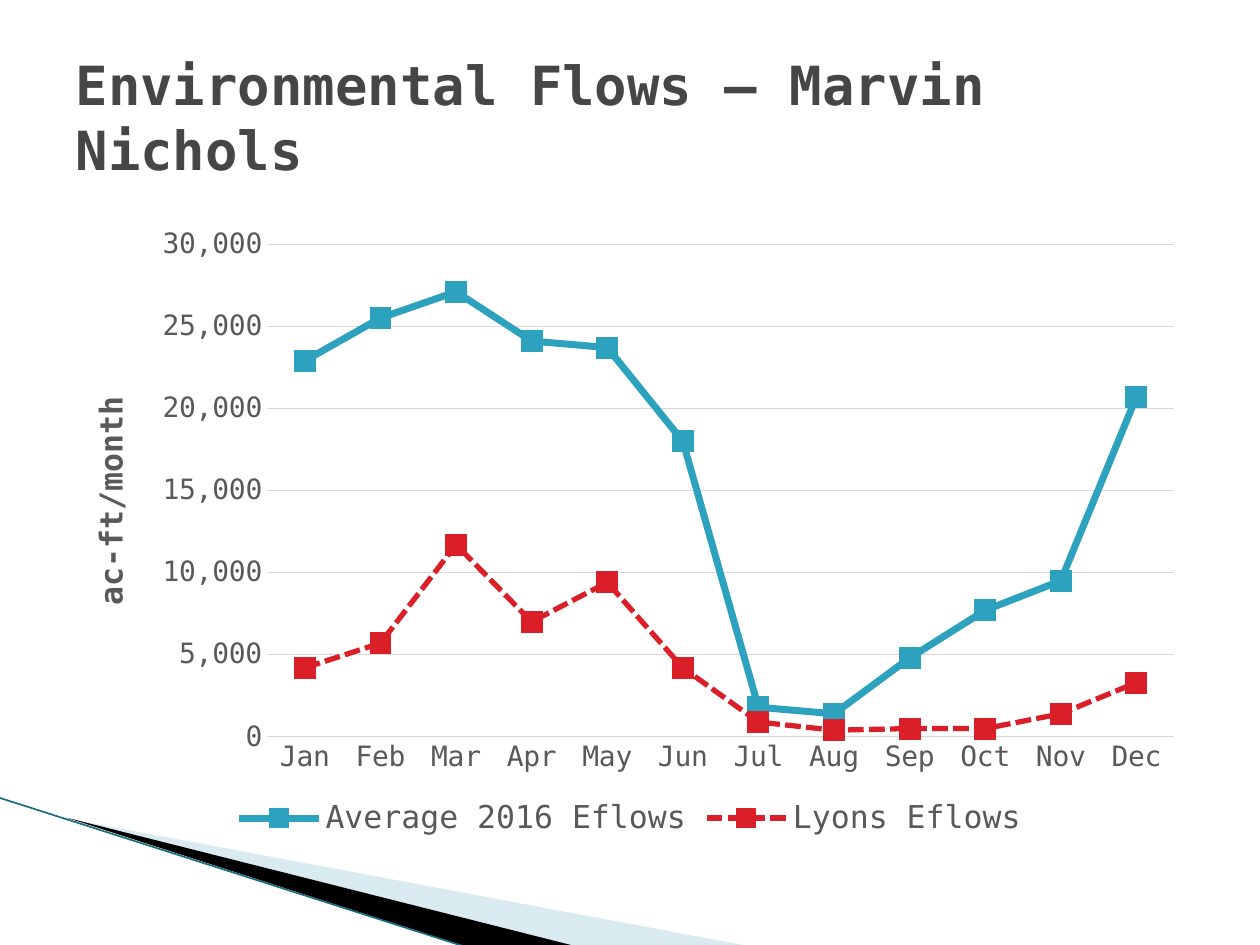
import pptx
import pptx.chart.data
import pptx.dml.color
import pptx.enum.chart
import pptx.enum.dml
import pptx.enum.shapes
import pptx.enum.text
import pptx.oxml
import pptx.oxml.ns
import pptx.util
from pptx.util import Inches

FONT = "DejaVu Sans Mono"
COLORS = {
    "title": "464646",
    "text": "595959",
    "grid": "D9D9D9",
    "average": "2DA2BF",
    "lyons": "DA1F28",
    "pale": "A0CBDC",
    "black": "000000",
    "edge": "1A6E82",
}
MONTHS = ["Jan", "Feb", "Mar", "Apr", "May", "Jun",
          "Jul", "Aug", "Sep", "Oct", "Nov", "Dec"]
AVERAGE = [22900, 25500, 27100, 24100, 23700, 18000,
           1800, 1400, 4800, 7700, 9500, 20700]
LYONS = [4200, 5700, 11700, 7000, 9400, 4200,
         900, 400, 500, 500, 1400, 3300]
PLOT_AREA = {"x": 0.18, "y": 0.04, "w": 0.8, "h": 0.79}


def color(name):
    return pptx.dml.color.RGBColor.from_string(COLORS[name])


def format_font(font, size, name="text", bold=False):
    font.name = FONT
    font.size = pptx.util.Pt(size)
    font.bold = bold
    font.color.rgb = color(name)


def write_text(frame, text, **style):
    paragraph = frame.paragraphs[0]
    span = paragraph.add_run()
    span.text = text
    format_font(span.font, **style)


def format_line(line, name, width, dash=None):
    line.color.rgb = color(name)
    line.width = pptx.util.Pt(width)
    if dash:
        line.dash_style = dash


def add_element(parent, tag, **attributes):
    element = pptx.oxml.parse_xml(
        f"<{tag} {pptx.oxml.ns.nsdecls(tag.split(':')[0])}/>")
    for key, value in attributes.items():
        element.set(key, str(value))
    parent.append(element)
    return element


def add_wedge(page, points, name, opacity=None):
    start, *rest = [(Inches(x), Inches(y)) for x, y in points]
    builder = page.shapes.build_freeform(*start)
    builder.add_line_segments(rest, close=True)
    wedge = builder.convert_to_shape()
    wedge.shadow.inherit = False
    wedge.fill.solid()
    wedge.fill.fore_color.rgb = color(name)
    wedge.line.fill.background()
    if opacity:
        fill = wedge.fill._xPr.find(pptx.oxml.ns.qn("a:solidFill"))
        add_element(fill[0], "a:alpha", val=opacity * 1000)


def add_edge(page, start, end):
    edge = page.shapes.add_connector(
        pptx.enum.shapes.MSO_CONNECTOR.STRAIGHT,
        *[Inches(value) for value in start + end])
    format_line(edge.line, "edge", 0.95)
    add_element(edge._element.spPr, "a:effectLst")


def add_title(page, text):
    title = page.shapes.title
    title.left, title.top = Inches(0.5), Inches(0.3)
    title.width, title.height = Inches(9), Inches(1.25)
    frame = title.text_frame
    frame.word_wrap = True
    frame.vertical_anchor = pptx.enum.text.MSO_ANCHOR.MIDDLE
    frame.paragraphs[0].alignment = pptx.enum.text.PP_ALIGN.LEFT
    write_text(frame, text, size=30.8, name="title", bold=True)


def place_plot(chart):
    plot_area = chart._chartSpace.chart.plotArea
    for old in plot_area.findall(pptx.oxml.ns.qn("c:layout")):
        plot_area.remove(old)
    layout = add_element(plot_area, "c:layout")
    plot_area.insert(0, layout)
    manual = add_element(layout, "c:manualLayout")
    add_element(manual, "c:layoutTarget", val="inner")
    for side in "xy":
        add_element(manual, f"c:{side}Mode", val="edge")
    for key, value in PLOT_AREA.items():
        add_element(manual, f"c:{key}", val=value)


def format_axes(chart):
    months, flows = chart.category_axis, chart.value_axis
    for axis in (months, flows):
        axis.major_tick_mark = pptx.enum.chart.XL_TICK_MARK.NONE
        axis.minor_tick_mark = pptx.enum.chart.XL_TICK_MARK.NONE
        format_font(axis.tick_labels.font, 16)
    format_line(months.format.line, "grid", 0.75)
    flows.format.line.fill.background()
    flows.minimum_scale, flows.maximum_scale = 0, 30000
    flows.major_unit = 5000
    flows.has_major_gridlines = True
    format_line(flows.major_gridlines.format.line, "grid", 0.75)
    flows.tick_labels.number_format = "#,##0"
    flows.tick_labels.number_format_is_linked = False
    write_text(flows.axis_title.text_frame, "ac-ft/month", size=18, bold=True)


def format_series(series, name, width, dash=None):
    series.smooth = False
    format_line(series.format.line, name, width, dash)
    marker = series.marker
    marker.style = pptx.enum.chart.XL_MARKER_STYLE.SQUARE
    marker.size = 12
    marker.format.fill.solid()
    marker.format.fill.fore_color.rgb = color(name)
    format_line(marker.format.line, name, 0.75)


def add_flow_chart(page):
    data = pptx.chart.data.CategoryChartData(number_format="#,##0")
    data.categories = MONTHS
    data.add_series("Average 2016 Eflows", AVERAGE)
    data.add_series("Lyons Eflows", LYONS)
    chart = page.shapes.add_chart(
        pptx.enum.chart.XL_CHART_TYPE.LINE_MARKERS,
        Inches(0.5), Inches(1.74), Inches(9), Inches(4.95), data).chart
    format_font(chart.font, 10, "black")
    chart.has_title = False
    chart.has_legend = True
    chart.legend.position = pptx.enum.chart.XL_LEGEND_POSITION.BOTTOM
    chart.legend.include_in_layout = False
    format_font(chart.legend.font, 18)
    format_axes(chart)
    place_plot(chart)
    plot = chart.plots[0]
    plot.vary_by_categories = False
    average, lyons = plot.series
    format_series(average, "average", 4)
    format_series(lyons, "lyons", 3, pptx.enum.dml.MSO_LINE.SQUARE_DOT)


def main():
    deck = pptx.Presentation()
    deck.slide_width, deck.slide_height = Inches(10), Inches(7.5)
    page = deck.slides.add_slide(deck.slide_layouts.get_by_name("Title Only"))
    add_wedge(page, [(0.55, 6.5), (5.95, 7.51), (4.56, 7.51)], "pale", 40)
    add_wedge(page, [(0.53, 6.49), (4.57, 7.51), (3.72, 7.52)], "black")
    add_edge(page, (-0.01, 6.33), (3.71, 7.52))
    add_title(page, "Environmental Flows – Marvin Nichols")
    add_flow_chart(page)
    deck.save("out.pptx")


if __name__ == "__main__":
    main()
